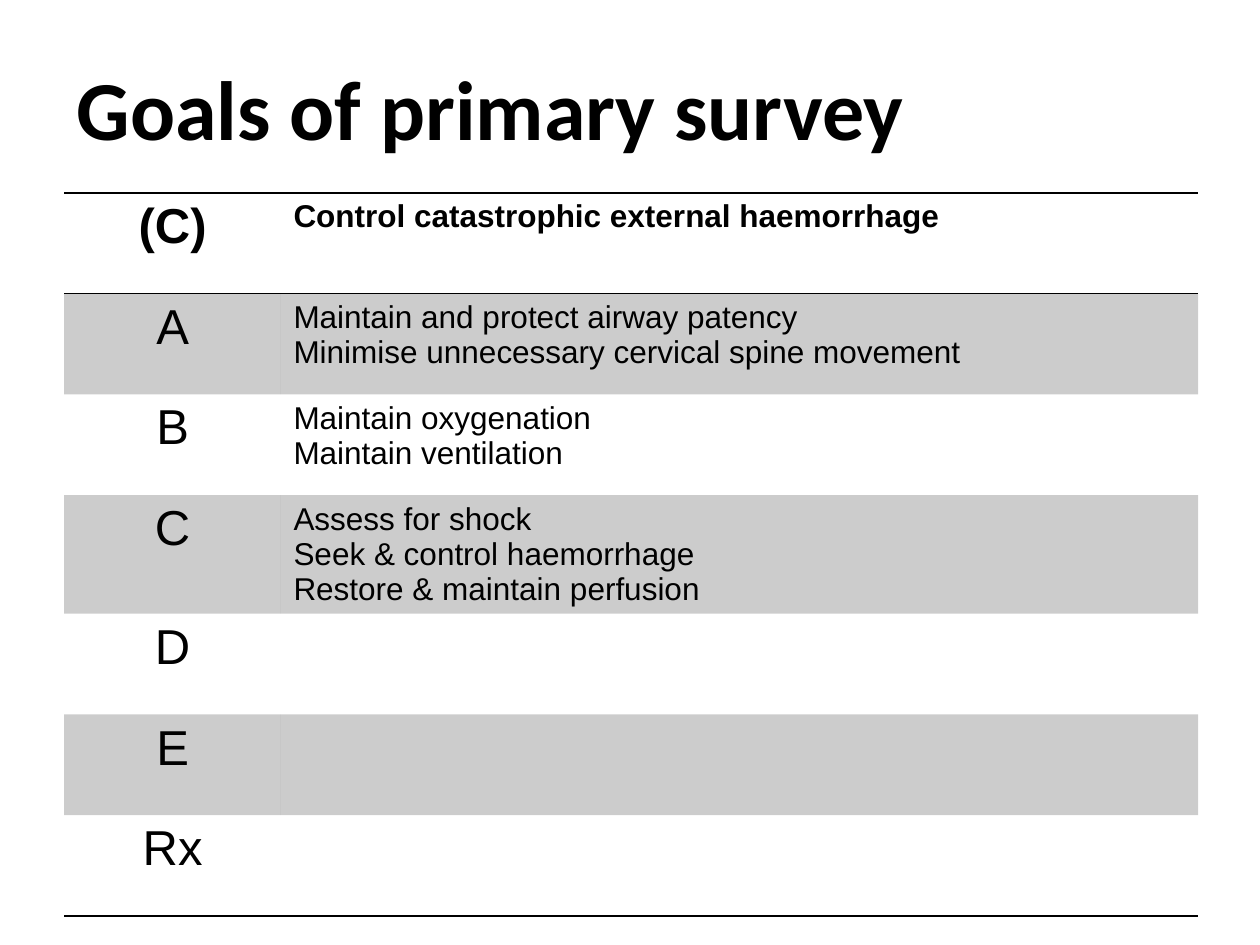
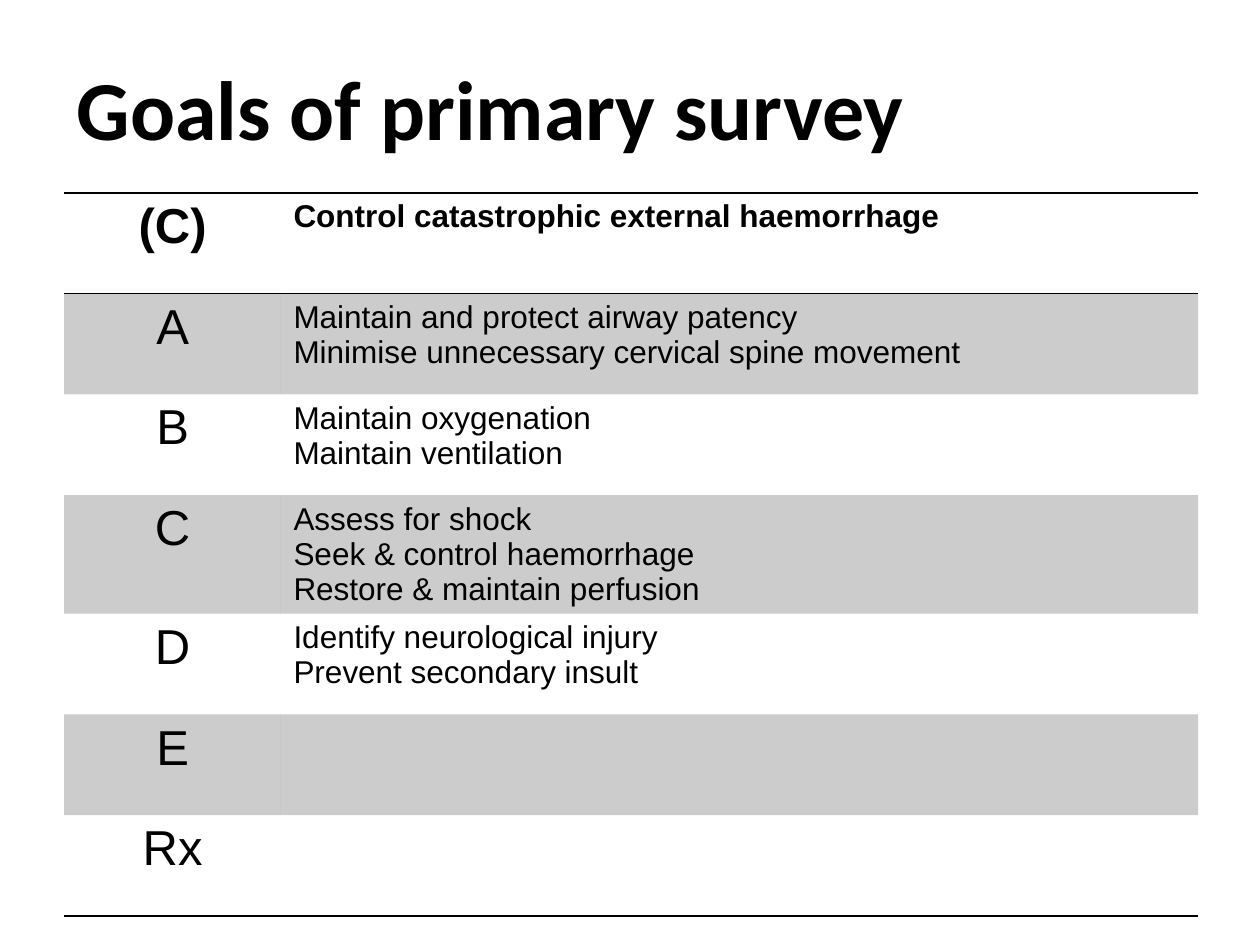
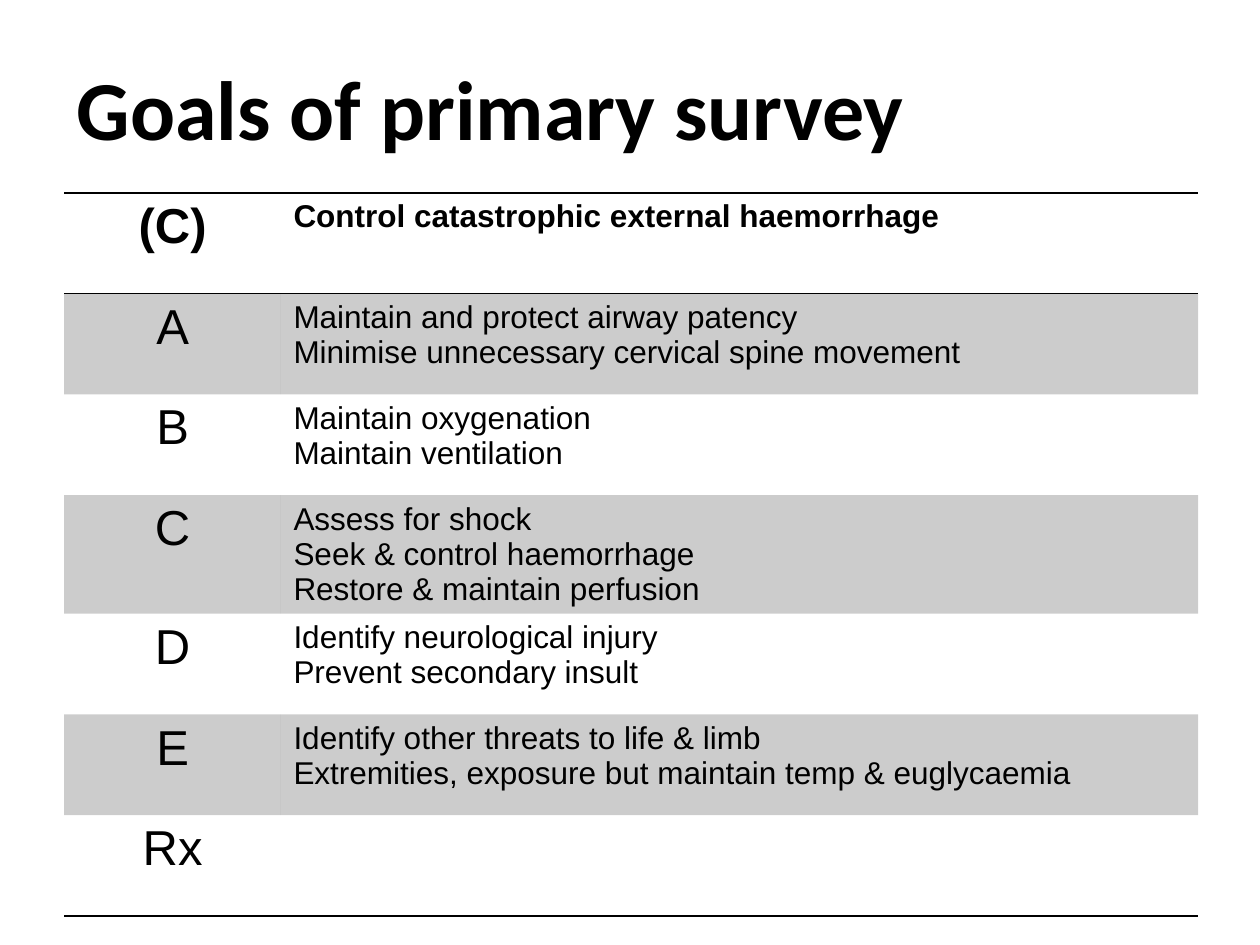
import lxml.etree
import pptx
import pptx.dml.color
import pptx.enum.text
import pptx.oxml.ns
import pptx.util

PX = 9144
BLACK = "000000"
BAND_ALPHA = 20
PLAIN_TABLE_STYLE = "{2D5ABB26-0587-4C30-8999-92F81FD0307C}"
ALIGN = pptx.enum.text.PP_ALIGN

TITLE = "Goals of primary survey"
TITLE_AREA = (51, 36, 900, 94)
TABLE_LEFT, TABLE_TOP = 51, 153
COLUMN_WIDTHS = (172, 728)
ROW_HEIGHT = 80

TITLE_FORMAT = {"name": "Calibri", "size": pptx.util.Pt(48), "bold": True}
LETTER_FORMAT = {"name": "Arial", "size": pptx.util.Pt(28)}
GOAL_FORMAT = {"name": "Arial", "size": pptx.util.Pt(18)}

GOALS = {
    "(C)": ["Control catastrophic external haemorrhage"],
    "A": ["Maintain and protect airway patency",
          "Minimise unnecessary cervical spine movement"],
    "B": ["Maintain oxygenation", "Maintain ventilation"],
    "C": ["Assess for shock", "Seek & control haemorrhage",
          "Restore & maintain perfusion"],
    "D": ["Identify neurological injury", "Prevent secondary insult"],
    "E": ["Identify other threats to life & limb",
          "Extremities, exposure but maintain temp & euglycaemia"],
    "Rx": [],
}
HIDDEN_STEPS = (("D", "E"), ("E",), ())


def px(length):
    return pptx.util.Emu(length * PX)


def color(value):
    return pptx.dml.color.RGBColor.from_string(value)


def qualified(tag):
    return pptx.oxml.ns.qn(tag)


def write_lines(frame, lines, font_format, align):
    for index, line in enumerate(lines):
        para = frame.add_paragraph() if index else frame.paragraphs[0]
        para.alignment = align
        span = para.add_run()
        span.text = line
        for name, value in font_format.items():
            setattr(span.font, name, value)
        span.font.color.rgb = color(BLACK)


def add_title(page):
    box = page.shapes.title
    for name, value in zip(("left", "top", "width", "height"), TITLE_AREA):
        setattr(box, name, px(value))
    frame = box.text_frame
    frame.word_wrap = True
    frame.auto_size = pptx.enum.text.MSO_AUTO_SIZE.NONE
    frame.vertical_anchor = pptx.enum.text.MSO_ANCHOR.BOTTOM
    write_lines(frame, [TITLE], TITLE_FORMAT, ALIGN.LEFT)


def fill_cell(cell, banded):
    if not banded:
        cell.fill.background()
        return
    cell.fill.solid()
    cell.fill.fore_color.rgb = color(BLACK)
    tint = cell._tc.tcPr.find(".//" + qualified("a:srgbClr"))
    lxml.etree.SubElement(tint, qualified("a:alpha"), val=str(BAND_ALPHA * 1000))


def rule_cell(cell, sides):
    properties = cell._tc.get_or_add_tcPr()
    for index, side in enumerate(sides):
        line = lxml.etree.Element(qualified("a:ln" + side), w=str(pptx.util.Pt(1)))
        paint = lxml.etree.SubElement(line, qualified("a:solidFill"))
        lxml.etree.SubElement(paint, qualified("a:srgbClr"), val=BLACK)
        properties.insert(index, line)


def add_goals_table(page, hidden):
    table = page.shapes.add_table(
        len(GOALS), len(COLUMN_WIDTHS), px(TABLE_LEFT), px(TABLE_TOP),
        px(sum(COLUMN_WIDTHS)), px(ROW_HEIGHT * len(GOALS))).table
    table._tbl.tblPr.find(qualified("a:tableStyleId")).text = PLAIN_TABLE_STYLE
    table.horz_banding = False
    for column, width in zip(table.columns, COLUMN_WIDTHS):
        column.width = px(width)
    border_sides = {0: "TB", len(GOALS) - 1: "B"}
    for index, (letter, goals) in enumerate(GOALS.items()):
        contents = (
            ([letter], LETTER_FORMAT, ALIGN.CENTER),
            ([] if letter in hidden else goals, GOAL_FORMAT, ALIGN.LEFT),
        )
        for cell, (lines, font_format, align) in zip(table.rows[index].cells, contents):
            fill_cell(cell, banded=index % 2 == 1)
            rule_cell(cell, border_sides.get(index, ""))
            write_lines(cell.text_frame, lines,
                        {**font_format, "bold": index == 0}, align)


def main():
    deck = pptx.Presentation()
    deck.slide_width, deck.slide_height = px(1000), px(750)
    for hidden in HIDDEN_STEPS:
        page = deck.slides.add_slide(deck.slide_layouts.get_by_name("Title Only"))
        add_title(page)
        add_goals_table(page, hidden)
    deck.save("out.pptx")


if __name__ == "__main__":
    main()
